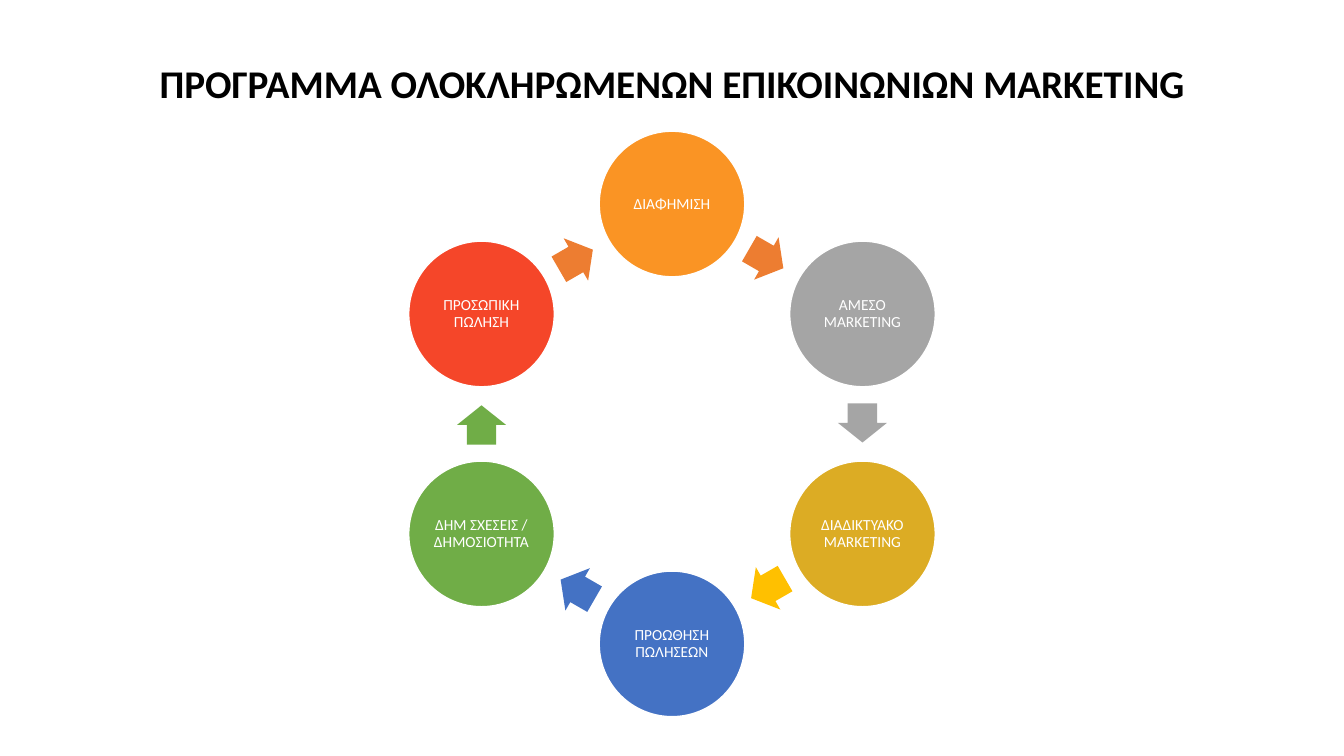
import math
from dataclasses import dataclass

import pptx
import pptx.dml.color
import pptx.enum.shapes
import pptx.enum.text
import pptx.util

Pt = pptx.util.Pt
Shape = pptx.enum.shapes.MSO_SHAPE


@dataclass(frozen=True)
class Theme:
    font: str = "Calibri"
    title_size: float = 28
    label_size: float = 11
    black: str = "000000"
    white: str = "FFFFFF"
    amber: str = "FA9424"
    orange: str = "ED7D31"
    gray: str = "A5A5A5"
    mustard: str = "DCAC24"
    yellow: str = "FFC000"
    blue: str = "4472C4"
    green: str = "70AD47"
    red: str = "F54629"


def rgb(value):
    return pptx.dml.color.RGBColor.from_string(value)


def write_text(frame, text, *, font, size, color, bold=False, inset=None):
    frame.word_wrap = True
    frame.vertical_anchor = pptx.enum.text.MSO_ANCHOR.MIDDLE
    if inset is not None:
        frame.margin_left = frame.margin_right = Pt(inset)
        frame.margin_top = frame.margin_bottom = Pt(inset)
    paragraph = frame.paragraphs[0]
    paragraph.alignment = pptx.enum.text.PP_ALIGN.CENTER
    paragraph.line_spacing = 0.9
    run = paragraph.add_run()
    run.text = text
    run.font.name = font
    run.font.size = Pt(size)
    run.font.bold = bold
    run.font.color.rgb = rgb(color)


class CycleSlide:
    def __init__(self, slide, theme):
        self.slide = slide
        self.theme = theme

    def title(self, text, left, top, width, height):
        heading = self.slide.shapes.add_textbox(Pt(left), Pt(top), Pt(width), Pt(height))
        write_text(heading.text_frame, text, font=self.theme.font,
                   size=self.theme.title_size, color=self.theme.black, bold=True)

    def centered(self, kind, x, y, width, height, fill):
        shape = self.slide.shapes.add_shape(
            kind, Pt(x - width / 2), Pt(y - height / 2), Pt(width), Pt(height))
        shape.shadow.inherit = False
        shape.fill.solid()
        shape.fill.fore_color.rgb = rgb(fill)
        return shape

    def stage(self, text, x, y, diameter, fill):
        circle = self.centered(Shape.OVAL, x, y, diameter, diameter, fill)
        circle.line.color.rgb = rgb(self.theme.white)
        circle.line.width = Pt(1)
        write_text(circle.text_frame, text, font=self.theme.font,
                   size=self.theme.label_size, color=self.theme.white, inset=1.4)

    def arrow(self, x, y, angle, fill):
        arrow = self.centered(Shape.RIGHT_ARROW, x, y, 28, 35, fill)
        arrow.line.fill.background()
        arrow.adjustments[0] = 0.6
        arrow.adjustments[1] = 0.5
        arrow.rotation = angle


def ring_point(radius, degrees):
    angle = math.radians(degrees)
    return 480 + radius * math.cos(angle), 302.8 + radius * math.sin(angle)


def main():
    presentation = pptx.Presentation()
    presentation.slide_width = Pt(960)
    presentation.slide_height = Pt(540)
    theme = Theme()
    cycle = CycleSlide(presentation.slides.add_slide(presentation.slide_layouts[6]), theme)

    cycle.title("ΠΡΟΓΡΑΜΜΑ ΟΛΟΚΛΗΡΩΜΕΝΩΝ ΕΠΙΚΟΙΝΩΝΙΩΝ MARKETING", 66, 28.8, 828, 64.8)

    stages = [
        ("ΔΙΑΦΗΜΙΣΗ", theme.amber, theme.orange),
        ("ΑΜΕΣΟ MARKETING", theme.gray, theme.gray),
        ("ΔΙΑΔΙΚΤΥΑΚΟ MARKETING", theme.mustard, theme.yellow),
        ("ΠΡΟΩΘΗΣΗ ΠΩΛΗΣΕΩΝ", theme.blue, theme.blue),
        ("ΔΗΜ ΣΧΕΣΕΙΣ / ΔΗΜΟΣΙΟΤΗΤΑ", theme.green, theme.green),
        ("ΠΡΟΣΩΠΙΚΗ ΠΩΛΗΣΗ", theme.red, theme.orange),
    ]
    radius = 157.1
    step = 360 / len(stages)
    arrow_radius = radius * math.cos(math.radians(step / 2))
    for index, (label, circle_color, arrow_color) in enumerate(stages):
        degrees = index * step - 90
        cycle.stage(label, *ring_point(radius, degrees), 104, circle_color)
        cycle.arrow(*ring_point(arrow_radius, degrees + step / 2 - 0.3),
                    (index * step + step / 2) % 360, arrow_color)

    presentation.save("out.pptx")


if __name__ == "__main__":
    main()
